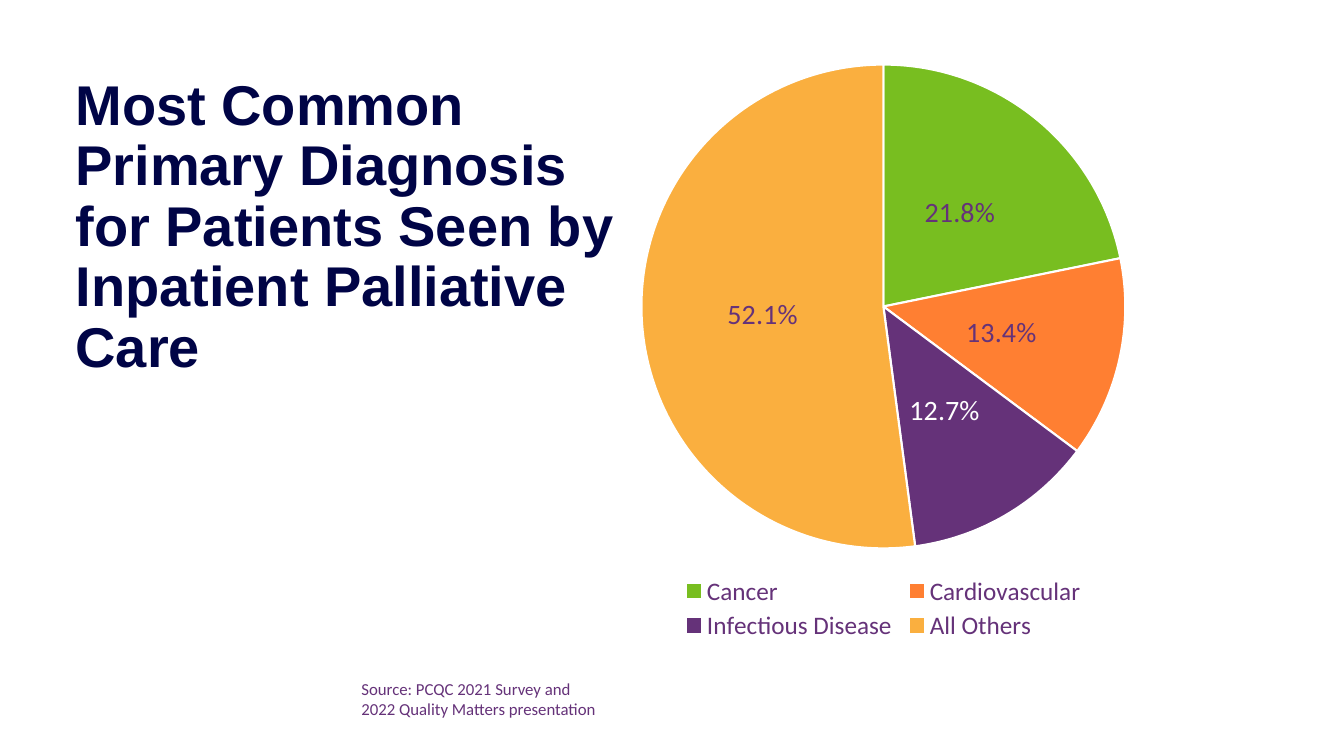
from lxml import etree
from pptx import Presentation
from pptx.chart.data import CategoryChartData
from pptx.dml.color import RGBColor
from pptx.enum.chart import XL_CHART_TYPE as ChartType
from pptx.enum.chart import XL_LABEL_POSITION as LabelPosition
from pptx.enum.chart import XL_LEGEND_POSITION as LegendPosition
from pptx.enum.text import MSO_ANCHOR as Anchor
from pptx.enum.text import MSO_AUTO_SIZE as AutoSize
from pptx.enum.text import PP_ALIGN as Align
from pptx.oxml.ns import qn
from pptx.util import Pt

NAVY, PURPLE, WHITE = "000446", "653279", "FFFFFF"
DIAGNOSES = {
    "Cancer": (0.218, "78BE20"),
    "Cardiovascular": (0.134, "FF7F32"),
    "Infectious Disease": (0.127, PURPLE),
    "All Others": (0.521, "FAAF3F"),
}


def rgb(code):
    return RGBColor.from_string(code)


def style_font(font, name, size, color, bold=False):
    font.name, font.size, font.bold = name, Pt(size), bold
    font.color.rgb = rgb(color)


def set_layout(parent, index, target, *fractions):
    for old in parent.findall(qn("c:layout")):
        parent.remove(old)
    layout = etree.Element(qn("c:layout"))
    manual = etree.SubElement(layout, qn("c:manualLayout"))
    if target:
        etree.SubElement(manual, qn("c:layoutTarget")).set("val", target)
    for edge in ("xMode", "yMode"):
        etree.SubElement(manual, qn(f"c:{edge}")).set("val", "edge")
    for key, fraction in zip("xywh", fractions):
        etree.SubElement(manual, qn(f"c:{key}")).set("val", str(fraction))
    parent.insert(index, layout)


class DiagnosisSlide:
    """Holds the slide and its type styles, and adds each kind of element."""

    heading_font, text_font = "Arial", "Calibri"

    def __init__(self, deck):
        self.slide = deck.slides.add_slide(deck.slide_layouts[5])
        background = self.slide.background.fill
        background.solid()
        background.fore_color.rgb = rgb(WHITE)

    def title(self, wording, left, top, width, height):
        heading = self.slide.shapes.title
        heading.left, heading.top = Pt(left), Pt(top)
        heading.width, heading.height = Pt(width), Pt(height)
        frame = heading.text_frame
        frame.margin_left = frame.margin_right = 0
        frame.margin_top = frame.margin_bottom = 0
        frame.word_wrap, frame.auto_size = True, AutoSize.SHAPE_TO_FIT_TEXT
        frame.vertical_anchor = Anchor.TOP
        line = frame.paragraphs[0]
        line.alignment, line.line_spacing = Align.LEFT, 0.9
        line.space_before = Pt(0)
        run = line.add_run()
        run.text = wording
        style_font(run.font, self.heading_font, 40, NAVY, True)

    def source(self, lines, left, top, width, height):
        box = self.slide.shapes.add_textbox(Pt(left), Pt(top), Pt(width), Pt(height))
        frame = box.text_frame
        frame.word_wrap, frame.auto_size = False, AutoSize.SHAPE_TO_FIT_TEXT
        for number, wording in enumerate(lines):
            line = frame.add_paragraph() if number else frame.paragraphs[0]
            line.alignment = Align.LEFT
            run = line.add_run()
            run.text = wording
            style_font(run.font, self.text_font, 12, PURPLE)

    def pie(self, shares, left, top, width, height):
        figures = CategoryChartData(number_format="0.0%")
        figures.categories = list(shares)
        figures.add_series("Series 1", [share for share, _ in shares.values()])
        chart = self.slide.shapes.add_chart(
            ChartType.PIE, Pt(left), Pt(top), Pt(width), Pt(height), figures
        ).chart
        chart.has_title = False
        style_font(chart.font, self.text_font, 18, PURPLE)
        self.legend(chart)
        plot = chart.plots[0]
        plot.vary_by_categories = True
        set_layout(plot._element.getparent(), 0, "inner", 0.23, 0.02, 0.54, 0.81)
        diagnoses = plot.series[0]
        for index, (_, color) in enumerate(shares.values()):
            wedge = diagnoses.points[index].format
            wedge.fill.solid()
            wedge.fill.fore_color.rgb = rgb(color)
            wedge.line.color.rgb = rgb(WHITE)
            wedge.line.width = Pt(1.5)
            if color == PURPLE:
                label = diagnoses.points[index].data_label
                style_font(label.font, self.text_font, 20, WHITE)
                label.position = LabelPosition.CENTER
        labels = diagnoses.data_labels
        labels.show_value, labels.show_percentage = True, False
        labels.number_format, labels.number_format_is_linked = "0.0%", False
        labels.position = LabelPosition.CENTER
        style_font(labels.font, self.text_font, 20, PURPLE)

    def legend(self, chart):
        chart.has_legend = True
        legend = chart.legend
        legend.position, legend.include_in_layout = LegendPosition.BOTTOM, False
        style_font(legend.font, self.text_font, 18, PURPLE)
        set_layout(legend._element, 1, None, 0.27, 0.87, 0.46, 0.12)


def main():
    deck = Presentation()
    deck.slide_width, deck.slide_height = Pt(960), Pt(540)
    page = DiagnosisSlide(deck)
    page.title(
        "Most Common Primary Diagnosis for Patients Seen by Inpatient Palliative Care",
        54, 55, 396, 218,
    )
    page.pie(DIAGNOSES, 311, 37.5, 640, 427)
    page.source(
        ["Source: PCQC 2021 Survey and", "2022 Quality Matters presentation"],
        251, 481, 184, 36,
    )
    deck.save("out.pptx")


if __name__ == "__main__":
    main()
